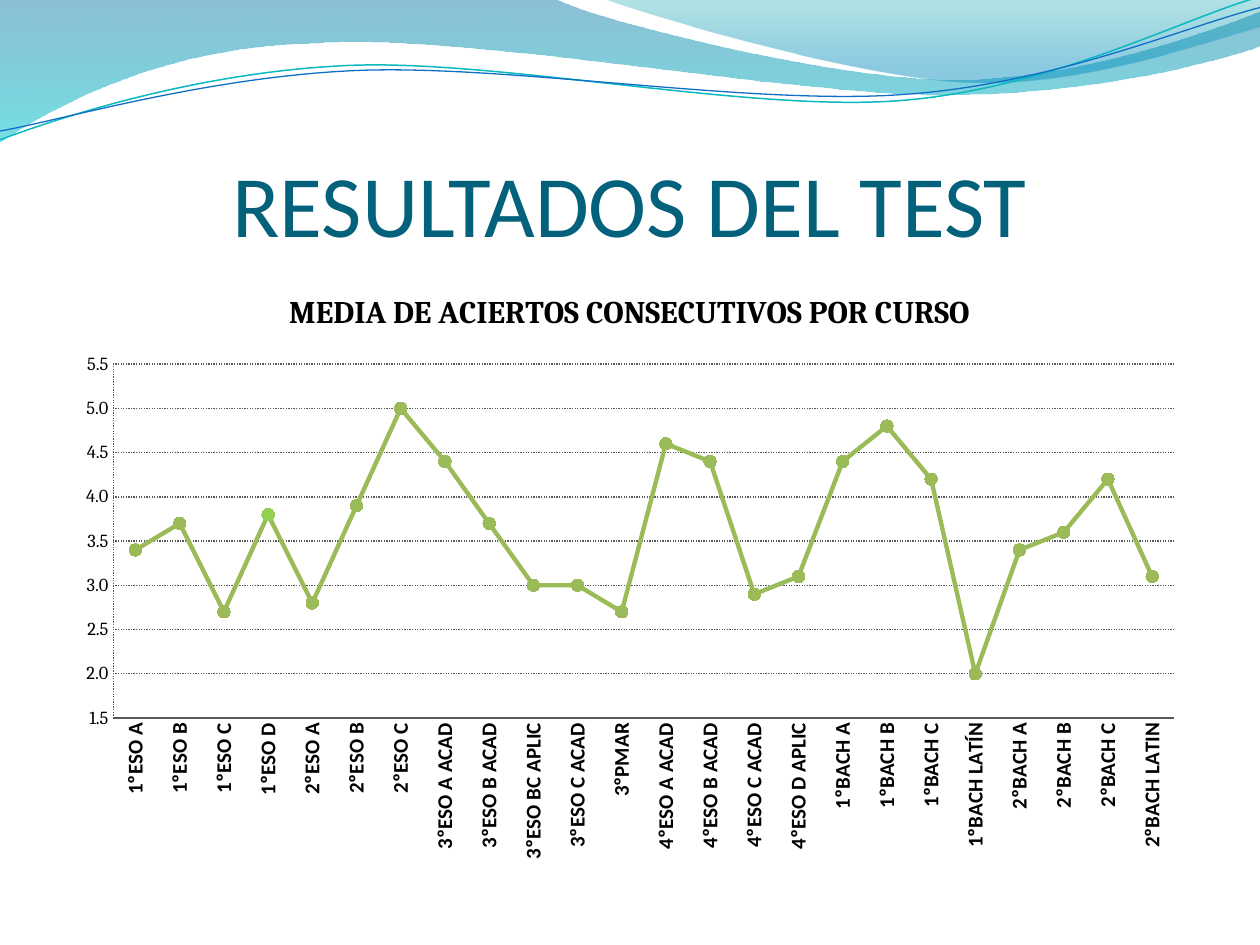
from dataclasses import dataclass

import lxml.etree
import pptx
import pptx.chart.data
import pptx.dml.color
import pptx.enum.chart
import pptx.enum.dml
import pptx.enum.text
import pptx.oxml
import pptx.oxml.ns
import pptx.util

Inches = pptx.util.Inches
Pt = pptx.util.Pt
RGB = pptx.dml.color.RGBColor
qn = pptx.oxml.ns.qn

TITLE = RGB(0x04, 0x61, 0x7B)
BLACK = RGB(0, 0, 0)
GRAY = RGB(0x59, 0x59, 0x59)
GREEN = RGB(0x9B, 0xBB, 0x59)
LIME = RGB(0x92, 0xD0, 0x50)
TEAL = RGB(0x0A, 0xB8, 0xBF)
BLUE = RGB(0x0F, 0x6F, 0xC6)
DEEP = RGB(0x00, 0x74, 0xA1)
CYAN = RGB(0x00, 0xC6, 0xCF)
SEA = RGB(0x00, 0xA1, 0xA9)
SKY = RGB(0x00, 0x8B, 0xBF)
WIDE, HIGH = 9, 4.8  # chart size in inches


@dataclass
class Stop:
    pos: float
    color: RGB
    alpha: int


@dataclass
class Band:
    """Outline of two-number line steps and six-number curve steps."""
    start: tuple
    steps: list
    stops: list


@dataclass
class Wave:
    start: tuple
    steps: list
    color: RGB
    width: float


BANDS = [
    Band((0, 0), [(4.4, -0.01), (4.76, 0.17, 6.64, 0.63, 7.58, 0.63),
                  (8.53, 0.63, 9.58, 0.26, 10, 0.09), (10.01, 0.36),
                  (9.83, 0.44, 8.7, 0.76, 7.46, 0.75),
                  (6.22, 0.75, 3.82, 0.28, 2.57, 0.34),
                  (1.29, 0.36, 0.46, 0.83, -0.01, 1.13), (0, 0)],
         [Stop(0, DEEP, 45), Stop(1, CYAN, 55)]),
    Band((4.79, -0.01), [(5.09, 0.11, 6.82, 0.62, 7.69, 0.65),
                         (8.56, 0.69, 9.61, 0.32, 10, 0.21), (10, 0),
                         (4.79, -0.01)],
         [Stop(0, SEA, 30), Stop(0.8, SKY, 45)]),
]
WAVES = [
    Wave((0, 1.11), [(0.48, 0.93, 1.58, 0.57, 2.77, 0.52),
                     (3.95, 0.47, 5.93, 0.89, 7.13, 0.8),
                     (8.33, 0.71, 9.38, 0.15, 9.98, -0.02)], TEAL, 0.85),
    Wave((0, 1.04), [(0.47, 0.96, 1.64, 0.61, 2.83, 0.56),
                     (4.03, 0.51, 5.97, 0.84, 7.17, 0.75),
                     (8.36, 0.67, 9.41, 0.21, 10, 0.06)], BLUE, 0.75),
]
MEANS = {
    "1ºESO A": 3.4, "1ºESO B": 3.7, "1ºESO C": 2.7, "1ºESO D": 3.8,
    "2ºESO A": 2.8, "2ºESO B": 3.9, "2ºESO C": 5.0,
    "3ºESO A ACAD": 4.4, "3ºESO B ACAD": 3.7, "3ºESO BC APLIC": 3.0,
    "3ºESO C ACAD": 3.0, "3ºPMAR": 2.7,
    "4ºESO A ACAD": 4.6, "4ºESO B ACAD": 4.4, "4ºESO C ACAD": 2.9,
    "4ºESO D APLIC": 3.1,
    "1ºBACH A": 4.4, "1ºBACH B": 4.8, "1ºBACH C": 4.2, "1ºBACH LATÍN": 2.0,
    "2ºBACH A": 3.4, "2ºBACH B": 3.6, "2ºBACH C": 4.2, "2ºBACH LATIN": 3.1,
}


def outline(slide, start: tuple, steps: list, close: bool):
    """Build a freeform through the step ends, then bend the curve steps."""
    ends = [(Inches(step[-2]), Inches(step[-1])) for step in steps]
    form = slide.shapes.build_freeform(Inches(start[0]), Inches(start[1]))
    form.add_line_segments(ends, close=close)
    shape = form.convert_to_shape()
    shape.shadow.inherit = False
    lines = list(shape._element.spPr.iter(qn("a:lnTo")))
    for line, step in zip(lines, steps):
        if len(step) == 2:
            continue
        curve = lxml.etree.Element(qn("a:cubicBezTo"))
        for x, y in zip(step[::2], step[1::2]):
            lxml.etree.SubElement(curve, qn("a:pt"), x=str(Inches(x) - shape.left),
                                  y=str(Inches(y) - shape.top))
        line.getparent().replace(line, curve)
    return shape


def draw_band(slide, band: Band) -> None:
    shape = outline(slide, band.start, band.steps, True)
    shape.line.fill.background()
    fill = shape.fill
    fill.gradient()
    fill.gradient_angle = 270
    for stop, want in zip(fill.gradient_stops, band.stops):
        stop.position = want.pos
        stop.color.rgb = want.color
    tones = shape._element.spPr.iter(qn("a:srgbClr"))
    for tone, want in zip(tones, band.stops):
        lxml.etree.SubElement(tone, qn("a:alpha"), val=str(want.alpha * 1000))


def draw_wave(slide, wave: Wave) -> None:
    shape = outline(slide, wave.start, wave.steps, False)
    shape.fill.background()
    style_line(shape.line, wave.color, wave.width)


def set_font(font, name: str, size: float, color: RGB, bold: bool = False) -> None:
    font.name = name
    font.size = Pt(size)
    font.color.rgb = color
    font.bold = bold


def draw_title(slide) -> None:
    box = slide.shapes.add_textbox(Inches(0.5), Inches(0.77), Inches(9), Inches(1.25))
    frame = box.text_frame
    frame.word_wrap = True
    frame.vertical_anchor = pptx.enum.text.MSO_ANCHOR.BOTTOM
    frame.margin_left = frame.margin_right = frame.margin_bottom = 0
    frame.text = "RESULTADOS DEL TEST"
    line = frame.paragraphs[0]
    line.alignment = pptx.enum.text.PP_ALIGN.CENTER
    set_font(line.runs[0].font, "Calibri", 50, TITLE)


def place(owner, index: int, **spots: float) -> None:
    """Fix the layout of a chart part, given in inches within the chart."""
    for old in owner.findall(qn("c:layout")):
        owner.remove(old)
    layout = lxml.etree.Element(qn("c:layout"))
    manual = lxml.etree.SubElement(layout, qn("c:manualLayout"))
    if "w" in spots:
        lxml.etree.SubElement(manual, qn("c:layoutTarget"), val="inner")
    for key in ("x", "y"):
        lxml.etree.SubElement(manual, qn(f"c:{key}Mode"), val="edge")
    for key, value in spots.items():
        whole = WIDE if key in "xw" else HIGH
        lxml.etree.SubElement(manual, qn(f"c:{key}"), val=str(value / whole))
    owner.insert(index, layout)


def style_line(line, color: RGB, width: float, dots: bool = False) -> None:
    line.color.rgb = color
    line.width = Pt(width)
    if dots:
        line.dash_style = pptx.enum.dml.MSO_LINE.ROUND_DOT


def style_mark(marker, color: RGB) -> None:
    marker.style = pptx.enum.chart.XL_MARKER_STYLE.CIRCLE
    marker.size = 7
    marker.format.fill.solid()
    marker.format.fill.fore_color.rgb = color
    style_line(marker.format.line, color, 0.75)


def draw_chart(slide) -> None:
    data = pptx.chart.data.CategoryChartData(number_format="0.0")
    data.categories = list(MEANS)
    data.add_series("Series 1", list(MEANS.values()))
    chart = slide.shapes.add_chart(
        pptx.enum.chart.XL_CHART_TYPE.LINE_MARKERS,
        Inches(0.5), Inches(2.12), Inches(WIDE), Inches(HIGH), data).chart
    set_font(chart.font, "Cambria", 10, BLACK)
    chart.has_legend = False
    head = chart.chart_title
    head.text_frame.text = "MEDIA DE ACIERTOS CONSECUTIVOS POR CURSO"
    set_font(head.text_frame.paragraphs[0].runs[0].font, "Cambria", 18, BLACK, True)
    place(head._element, 1, x=1.75, y=0.14)
    place(chart._chartSpace.find(".//" + qn("c:plotArea")), 0,
          x=0.4, y=0.77, w=8.42, h=2.81)

    cats, vals = chart.category_axis, chart.value_axis
    for axis in (cats, vals):
        axis.major_tick_mark = axis.minor_tick_mark = pptx.enum.chart.XL_TICK_MARK.NONE
    set_font(cats.tick_labels.font, "Calibri", 12, BLACK, True)
    cats._element.find(qn("c:txPr")).find(qn("a:bodyPr")).set("rot", "-5400000")
    style_line(cats.format.line, GRAY, 0.75)
    set_font(vals.tick_labels.font, "Cambria", 10.5, BLACK)
    vals.tick_labels.number_format = "0.0"
    vals.tick_labels.number_format_is_linked = False
    vals.minimum_scale, vals.maximum_scale, vals.major_unit = 1.5, 5.5, 0.5
    for line in (vals.format.line, vals.major_gridlines.format.line):
        style_line(line, GRAY, 0.75, True)

    plot = chart.plots[0]
    plot.vary_by_categories = False
    means = plot.series[0]
    means.smooth = False
    style_line(means.format.line, GREEN, 2.5)
    style_mark(means.marker, GREEN)
    point = means.points[list(MEANS).index("1ºESO D")]
    style_mark(point.marker, LIME)
    style_line(point.format.line, LIME, 2.5)


def main() -> None:
    deck = pptx.Presentation()
    deck.slide_width, deck.slide_height = Inches(10), Inches(7.5)
    slide = deck.slides.add_slide(deck.slide_layouts[6])
    for band in BANDS:
        draw_band(slide, band)
    for wave in WAVES:
        draw_wave(slide, wave)
    draw_title(slide)
    draw_chart(slide)
    deck.save("out.pptx")


if __name__ == "__main__":
    main()
